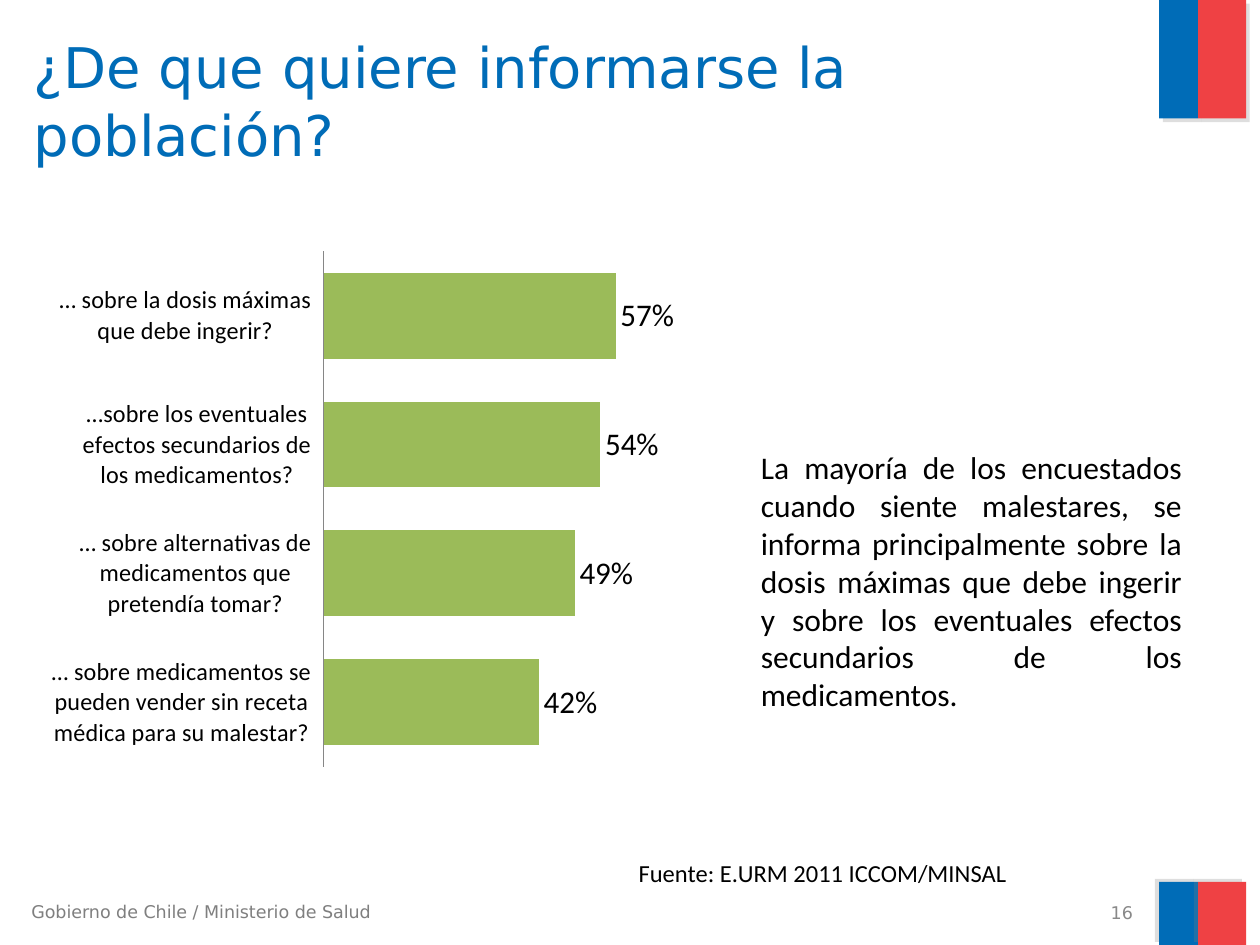
"""Build the slide on what the population wants to be informed about."""
from lxml.etree import SubElement
from pptx import Presentation
from pptx.chart.data import CategoryChartData
from pptx.dml.color import RGBColor
from pptx.enum.chart import XL_CHART_TYPE as ChartType, XL_LABEL_POSITION as LabelPosition
from pptx.enum.chart import XL_TICK_LABEL_POSITION as TickLabels, XL_TICK_MARK as TickMark
from pptx.enum.shapes import MSO_SHAPE as Shape
from pptx.enum.text import MSO_ANCHOR as Anchor, PP_ALIGN as Align
from pptx.oxml import parse_xml
from pptx.oxml.ns import nsdecls, qn
from pptx.util import Inches, Pt


def rgb(value):
    return RGBColor.from_string(value)


def write(holder, text, size, font_name, color, align=Align.LEFT, anchor=Anchor.TOP, wrap=True):
    frame = holder.text_frame
    for key, value in {"text": text, "word_wrap": wrap, "vertical_anchor": anchor}.items():
        setattr(frame, key, value)
    paragraph = frame.paragraphs[0]
    paragraph.alignment = align
    for key, value in {"size": Pt(size), "name": font_name}.items():
        setattr(paragraph.font, key, value)
    paragraph.font.color.rgb = rgb(color)


deck = Presentation()
deck.slide_width, deck.slide_height = Inches(10), Inches(7.5)
slide = deck.slides.add_slide(deck.slide_layouts[6])
shapes = slide.shapes

flag_columns = [(9.2, 0.31, "006CB7"), (9.51, 0.38, "EF4144")]
for top, height, shadow_angle in [(0, 0.94, 45), (7, 0.5, 215)]:
    for left, width, color in flag_columns:
        band = shapes.add_shape(Shape.RECTANGLE, Inches(left), Inches(top),
                                Inches(width), Inches(height))
        band.fill.solid()
        band.fill.fore_color.rgb = rgb(color)
        band.line.fill.background()
        band.shadow.inherit = False
        effects = band._element.spPr.find(qn("a:effectLst"))
        effects.append(parse_xml(
            f'<a:outerShdw {nsdecls("a")} dist="{Pt(3)}" dir="{shadow_angle * 60000}" '
            'algn="ctr" rotWithShape="0"><a:srgbClr val="808080">'
            '<a:alpha val="25000"/></a:srgbClr></a:outerShdw>'))

answers = CategoryChartData(number_format="0%")
answers.categories = [
    "… sobre la dosis máximas que debe ingerir?",
    "…sobre los eventuales efectos secundarios de los medicamentos?",
    "… sobre alternativas de medicamentos que pretendía tomar?",
    "… sobre medicamentos se pueden vender sin receta médica para su malestar?",
]
answers.add_series("Series 1", [0.57, 0.54, 0.49, 0.42])
chart = shapes.add_chart(ChartType.BAR_CLUSTERED, Inches(0.41), Inches(1.86),
                         Inches(6.35), Inches(4.45), answers).chart
chart.has_legend = chart.has_title = False
chart.font.size, chart.font.name = Pt(18), "Calibri"
chart.font.color.rgb = rgb("000000")

topics = chart.category_axis
for key, value in {"reverse_order": True, "major_tick_mark": TickMark.NONE,
                   "minor_tick_mark": TickMark.NONE,
                   "tick_label_position": TickLabels.LOW}.items():
    setattr(topics, key, value)
topics.tick_labels.font.size = Pt(14)
topics.format.line.color.rgb = rgb("868686")
topics.format.line.width = Pt(0.75)

share = chart.value_axis
for key, value in {"minimum_scale": 0, "maximum_scale": 1, "major_unit": 1,
                   "has_major_gridlines": False, "visible": False}.items():
    setattr(share, key, value)

plot = chart.plots[0]
plot.gap_width, plot.vary_by_categories = 50, False
bars = plot.series[0]
bars.format.fill.solid()
bars.format.fill.fore_color.rgb = rgb("9BBB59")
for key, value in {"show_value": True, "number_format": "0%", "number_format_is_linked": False,
                   "position": LabelPosition.OUTSIDE_END}.items():
    setattr(bars.data_labels, key, value)

plot_area = chart._chartSpace.chart.plotArea
for layout in plot_area.findall(qn("c:layout")):
    plot_area.remove(layout)
layout = plot_area.makeelement(qn("c:layout"))
plot_area.insert(0, layout)
manual = SubElement(layout, qn("c:manualLayout"))
for tag, value in {"layoutTarget": "inner", "xMode": "edge", "yMode": "edge",
                   "x": 0.33, "y": 0.03, "w": 0.65, "h": 0.92}.items():
    SubElement(manual, qn(f"c:{tag}")).set("val", str(value))

conclusion = shapes.add_shape(Shape.RECTANGLE, Inches(5.94), Inches(3.51),
                              Inches(3.54), Inches(2.22))
conclusion.shadow.inherit = False
conclusion.fill.solid()
conclusion.fill.fore_color.rgb = conclusion.line.color.rgb = rgb("FFFFFF")
conclusion.line.width = Pt(2)
write(conclusion, "La mayoría de los encuestados cuando siente malestares, se informa "
      "principalmente sobre la dosis máximas que debe ingerir y sobre los eventuales "
      "efectos secundarios de los medicamentos.", 18, "Calibri", "000000", Align.JUSTIFY)

captions = [
    ((0.17, 0.17, 8.93, 1.25), "¿De que quiere informarse la población?",
     32, "DejaVu Sans", "006CB7", Align.LEFT, Anchor.MIDDLE),
    ((4.97, 6.76, 3.15, 0.34), "Fuente: E.URM 2011 ICCOM/MINSAL",
     14, "Calibri", "000000", Align.LEFT, Anchor.TOP, False),
    ((0.15, 7.1, 3.02, 0.27), "Gobierno de Chile / Ministerio de Salud",
     10, "DejaVu Sans", "7F7F7F"),
    ((6.76, 7.14, 2.33, 0.21), "16", 10, "DejaVu Sans", "898989", Align.RIGHT, Anchor.MIDDLE),
]
for place, *content in captions:
    write(shapes.add_textbox(*map(Inches, place)), *content)

deck.save("out.pptx")
